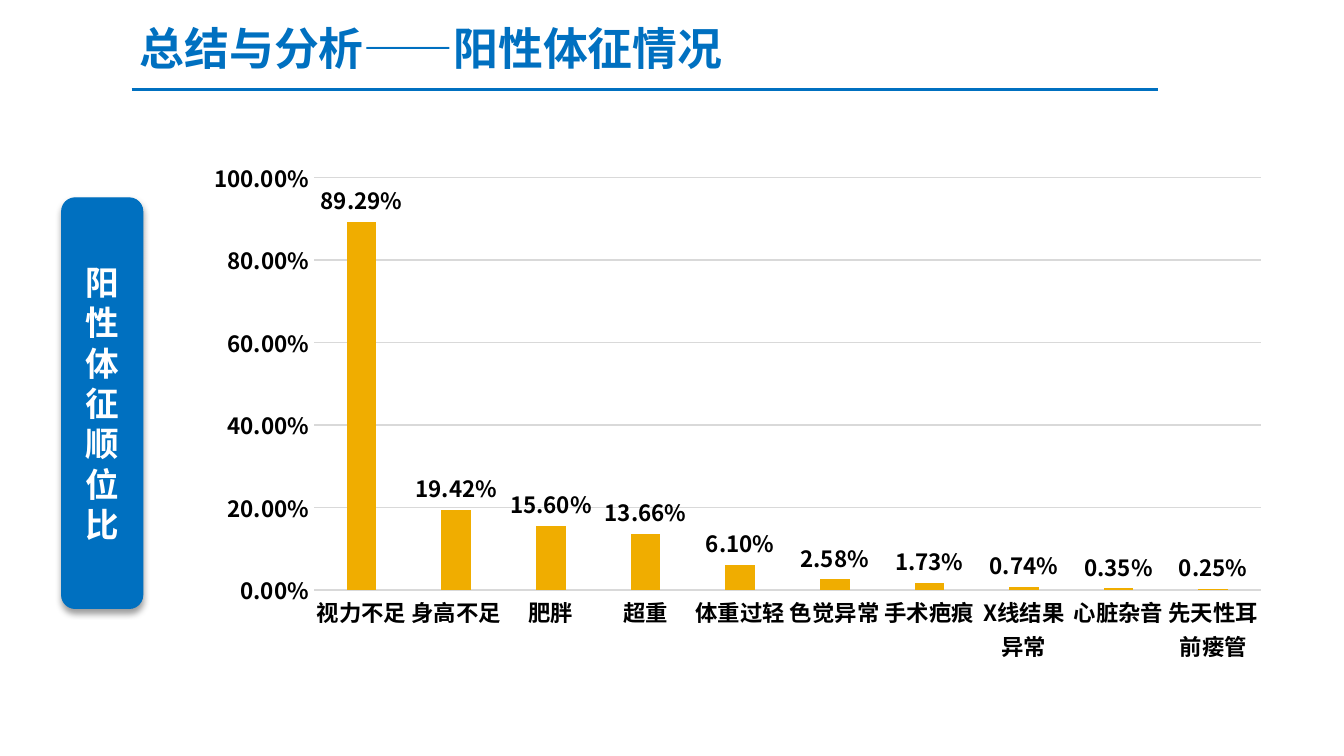
from lxml import etree
from pptx import Presentation
from pptx.chart.data import CategoryChartData
from pptx.dml.color import RGBColor
from pptx.enum.chart import XL_CHART_TYPE, XL_LABEL_POSITION, XL_TICK_MARK
from pptx.enum.shapes import MSO_CONNECTOR, MSO_SHAPE
from pptx.enum.text import MSO_ANCHOR, MSO_AUTO_SIZE, PP_ALIGN
from pptx.oxml.ns import qn
from pptx.util import Pt

COLUMNS = XL_CHART_TYPE.COLUMN_CLUSTERED
OUTSIDE_END = XL_LABEL_POSITION.OUTSIDE_END
NO_TICK = XL_TICK_MARK.NONE
STRAIGHT = MSO_CONNECTOR.STRAIGHT
ROUNDED = MSO_SHAPE.ROUNDED_RECTANGLE
MIDDLE = MSO_ANCHOR.MIDDLE
FIXED_SIZE = MSO_AUTO_SIZE.NONE
LEFT, CENTER = PP_ALIGN.LEFT, PP_ALIGN.CENTER

FONT = "Noto Sans CJK SC"
PERCENT = "0.00%"
COLORS = {
    "blue": "0070C0",
    "white": "FFFFFF",
    "black": "000000",
    "grid": "D9D9D9",
    "bar": "F0AD00",
}
SIGN_RATES = {
    "视力不足": 0.8929,
    "身高不足": 0.1942,
    "肥胖": 0.156,
    "超重": 0.1366,
    "体重过轻": 0.061,
    "色觉异常": 0.0258,
    "手术疤痕": 0.0173,
    "X线结果异常": 0.0074,
    "心脏杂音": 0.0035,
    "先天性耳前瘘管": 0.0025,
}


def rgb(name):
    return RGBColor.from_string(COLORS[name])


class SlideBuilder:
    """Holds the slide and draws each kind of element; lengths are points."""

    def __init__(self, slide):
        self.slide = slide

    def style_font(self, font, size, color, bold=True):
        font.name = FONT
        font.size = Pt(size)
        font.bold = bold
        font.color.rgb = rgb(color)

    def style_line(self, line, color, width):
        line.color.rgb = rgb(color)
        line.width = Pt(width)

    def set_text(self, frame, text, size, color, align, spacing):
        frame.word_wrap = True
        frame.auto_size = FIXED_SIZE
        frame.vertical_anchor = MIDDLE
        paragraph = frame.paragraphs[0]
        paragraph.alignment = align
        paragraph.line_spacing = spacing
        run = paragraph.add_run()
        run.text = text
        self.style_font(run.font, size, color)
        east_asian = etree.Element(qn("a:ea"), typeface=FONT)
        run.font._element.find(qn("a:latin")).addnext(east_asian)

    def title(self, text, left, top, width, height):
        title = self.slide.shapes.title
        title.left, title.top = Pt(left), Pt(top)
        title.width, title.height = Pt(width), Pt(height)
        self.set_text(title.text_frame, text, 24, "blue", LEFT, 1.0)

    def rule(self, left, right, y):
        rule = self.slide.shapes.add_connector(
            STRAIGHT, Pt(left), Pt(y), Pt(right), Pt(y))
        self.style_line(rule.line, "blue", 1.25)
        etree.SubElement(rule._element.spPr, qn("a:effectLst"))

    def banner(self, text, left, top, width, height):
        banner = self.slide.shapes.add_shape(
            ROUNDED, Pt(left), Pt(top), Pt(width), Pt(height))
        banner.fill.solid()
        banner.fill.fore_color.rgb = rgb("blue")
        self.style_line(banner.line, "blue", 0.5)
        self.soft_shadow(banner)
        self.set_text(banner.text_frame, text, 18, "white", CENTER, Pt(21.6))

    def soft_shadow(self, shape):
        shape.shadow.inherit = False
        effects = shape._element.spPr.find(qn("a:effectLst"))
        shadow = etree.SubElement(
            effects, qn("a:outerShdw"), blurRad=str(Pt(3.5)),
            dist=str(Pt(2)), dir="5400000", rotWithShape="0")
        tint = etree.SubElement(shadow, qn("a:srgbClr"), val=COLORS["black"])
        etree.SubElement(tint, qn("a:alpha"), val="38000")

    def column_chart(self, rates, left, top, width, height):
        data = CategoryChartData(number_format=PERCENT)
        data.categories = list(rates)
        data.add_series("Series 1", list(rates.values()))
        chart = self.slide.shapes.add_chart(
            COLUMNS, Pt(left), Pt(top), Pt(width), Pt(height), data).chart
        chart.has_legend = False
        chart.has_title = False
        self.style_font(chart.font, 10, "black", bold=False)

        for axis in (chart.category_axis, chart.value_axis):
            axis.major_tick_mark = NO_TICK
            axis.minor_tick_mark = NO_TICK
            self.style_font(axis.tick_labels.font, 12, "black")
        self.style_line(chart.category_axis.format.line, "grid", 0.75)

        values = chart.value_axis
        values.minimum_scale, values.maximum_scale = 0, 1
        values.major_unit = 0.2
        values.format.line.fill.background()
        values.tick_labels.number_format = PERCENT
        values.tick_labels.number_format_is_linked = False
        self.style_line(values.major_gridlines.format.line, "grid", 0.75)

        plot = chart.plots[0]
        plot.gap_width, plot.overlap = 219, -27
        plot.vary_by_categories = False
        series = plot.series[0]
        series.format.fill.solid()
        series.format.fill.fore_color.rgb = rgb("bar")
        labels = series.data_labels
        labels.show_value = True
        labels.position = OUTSIDE_END
        labels.number_format = PERCENT
        labels.number_format_is_linked = False
        self.style_font(labels.font, 12, "black")


def main():
    deck = Presentation()
    deck.slide_width, deck.slide_height = Pt(720), Pt(405)
    title_only = deck.slide_layouts[5]
    builder = SlideBuilder(deck.slides.add_slide(title_only))
    builder.rule(70.5, 620.5, 48)
    builder.title("总结与分析——阳性体征情况", 67.7, 4.5, 333.5, 42.5)
    builder.banner("阳性体征顺位比", 33, 106, 43.5, 220)
    builder.column_chart(SIGN_RATES, 103, 80.5, 584, 280)
    deck.save("out.pptx")


if __name__ == "__main__":
    main()
